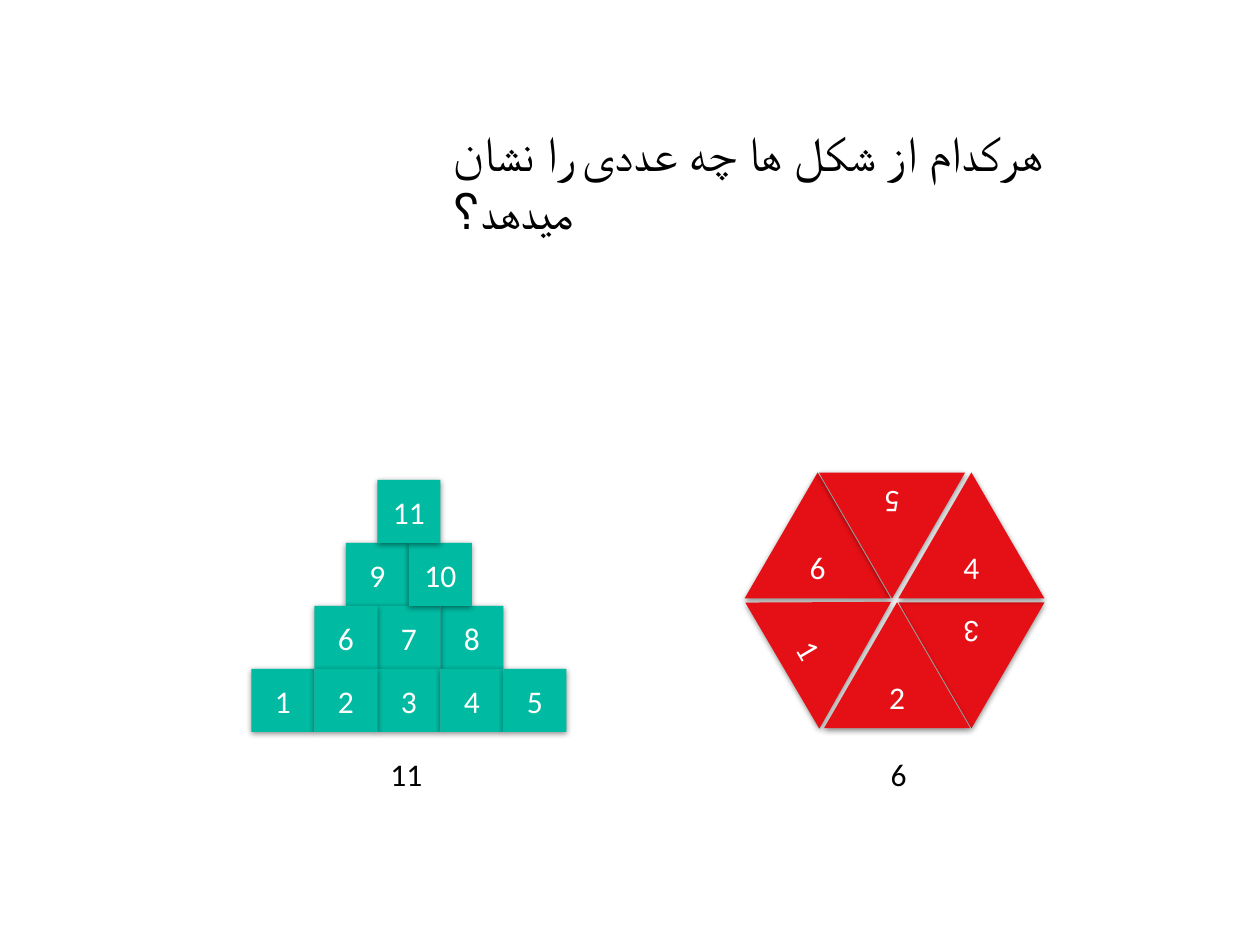
from dataclasses import dataclass

from lxml.etree import SubElement
from pptx import Presentation
from pptx.dml.color import RGBColor
from pptx.enum.shapes import MSO_SHAPE as Shape
from pptx.enum.text import MSO_ANCHOR as Anchor, MSO_AUTO_SIZE as AutoSize, PP_ALIGN as Align
from pptx.oxml.ns import qn
from pptx.util import Inches, Pt


@dataclass(frozen=True)
class Theme:
    font: str = "Calibri"
    title_size: int = 28
    body_size: int = 18
    dark: str = "000000"
    light: str = "FFFFFF"
    block: str = "00BAA2"
    wedge: str = "E51016"
    shadow_blur: float = 3.5
    shadow_distance: float = 1.1
    shadow_opacity: int = 45


THEME = Theme()
CELL = 0.25
COLUMNS, ROWS = 40, 30

BLOCK_SIZE = 2
PYRAMID_LEFT, PYRAMID_BASE = 7.98, 21.24
PYRAMID = ((1, 2, 3, 4, 5), (6, 7, 8), (9, 10), (11,))
STACKING = (1, 8, 9, 7, 6, 3, 4, 5, 2, 10, 11)

WEDGE_WIDTH, WEDGE_HEIGHT = 4.64, 4
UPPER, LOWER = 15, 19.12
WEDGES = (
    (6, 23.64, UPPER, 0),
    (3, 28.52, LOWER, 180),
    (5, 26, UPPER, 180),
    (4, 28.52, UPPER, 0),
    (1, 24.24, 18.12, 59.6),
    (2, 26.16, LOWER, 0),
)


def grid(*cells):
    return [Inches(cell * CELL) for cell in cells]


def add_run(paragraph, text, size, color):
    run = paragraph.add_run()
    run.text = text
    run.font.name = THEME.font
    run.font.size = Pt(size)
    run.font.color.rgb = RGBColor.from_string(color)


def add_soft_shadow(shape):
    shape.shadow.inherit = False
    effects = shape.element.spPr.find(qn("a:effectLst"))
    shadow = SubElement(
        effects, qn("a:outerShdw"),
        blurRad=str(Pt(THEME.shadow_blur)), dist=str(Pt(THEME.shadow_distance)),
        dir="5400000", rotWithShape="0",
    )
    color = SubElement(shadow, qn("a:srgbClr"), val=THEME.dark)
    SubElement(color, qn("a:alpha"), val=str(THEME.shadow_opacity * 1000))


def add_numbered_shape(slide, kind, number, place, color, rotation=0):
    shape = slide.shapes.add_shape(kind, *grid(*place))
    shape.rotation = rotation
    shape.fill.solid()
    shape.fill.fore_color.rgb = RGBColor.from_string(color)
    shape.line.fill.background()
    add_soft_shadow(shape)
    shape.text_frame.vertical_anchor = Anchor.MIDDLE
    paragraph = shape.text_frame.paragraphs[0]
    paragraph.alignment = Align.CENTER
    add_run(paragraph, str(number), THEME.body_size, THEME.light)


def add_text(slide, text, place, size):
    frame = slide.shapes.add_textbox(*grid(*place)).text_frame
    frame.word_wrap = True
    frame.auto_size = AutoSize.SHAPE_TO_FIT_TEXT
    add_run(frame.paragraphs[0], text, size, THEME.dark)


def add_pyramid(slide):
    places = {}
    for level, numbers in enumerate(PYRAMID):
        indent = (len(PYRAMID[0]) - len(numbers)) * BLOCK_SIZE / 2
        for index, number in enumerate(numbers):
            left = PYRAMID_LEFT + indent + index * BLOCK_SIZE
            top = PYRAMID_BASE - level * BLOCK_SIZE
            places[number] = (left, top, BLOCK_SIZE, BLOCK_SIZE)
    for number in STACKING:
        add_numbered_shape(slide, Shape.RECTANGLE, number, places[number], THEME.block)


def add_hexagon(slide):
    for number, left, top, rotation in WEDGES:
        place = (left, top, WEDGE_WIDTH, WEDGE_HEIGHT)
        add_numbered_shape(slide, Shape.ISOSCELES_TRIANGLE, number, place, THEME.wedge, rotation)


def main():
    presentation = Presentation()
    presentation.slide_width, presentation.slide_height = grid(COLUMNS, ROWS)
    slide = presentation.slides.add_slide(presentation.slide_layouts[6])
    add_text(slide, "هرکدام از شکل ها چه عددی را نشان میدهد؟", (14, 3.68, 23.32, 2.28), THEME.title_size)
    add_pyramid(slide)
    add_hexagon(slide)
    add_text(slide, "11", (12, 23.76, 2, 1.6), THEME.body_size)
    add_text(slide, "6", (27.88, 23.76, 3.16, 1.6), THEME.body_size)
    presentation.save("out.pptx")


if __name__ == "__main__":
    main()
